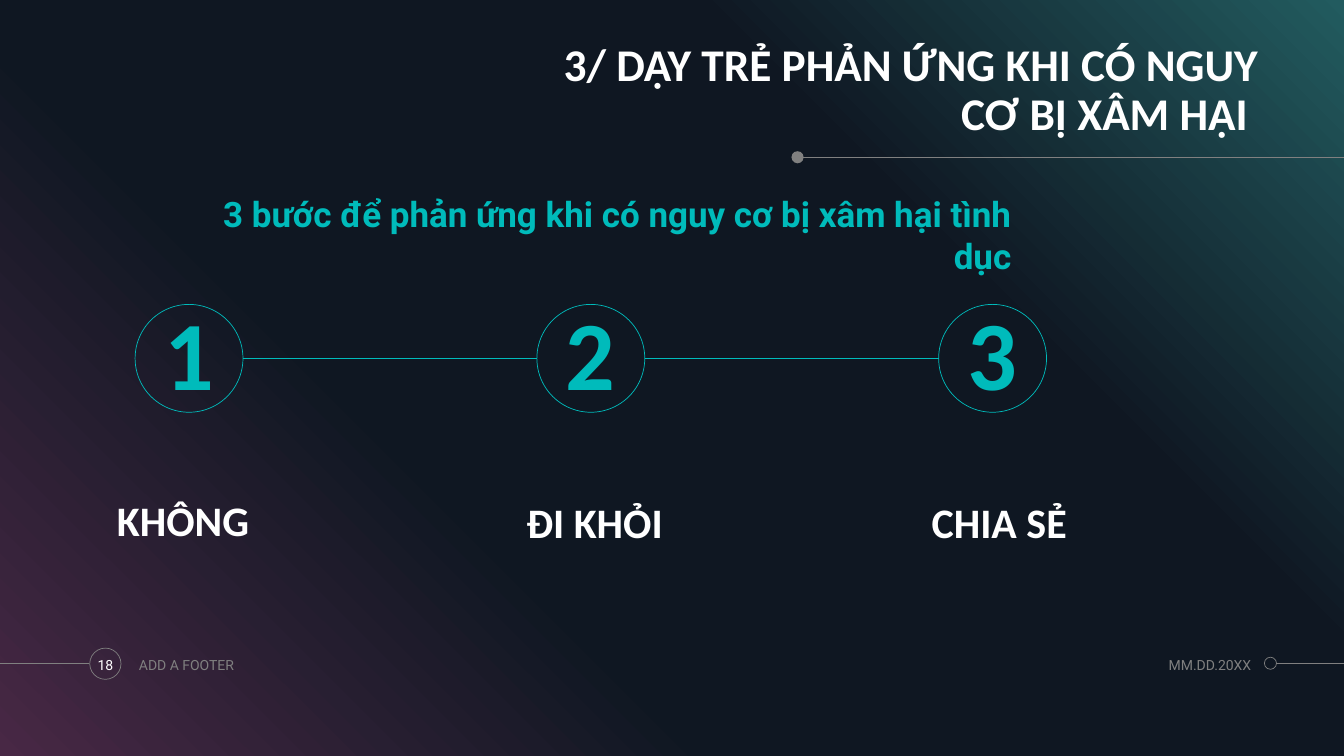
from dataclasses import dataclass

from lxml import etree
from pptx import Presentation
from pptx.dml.color import RGBColor
from pptx.enum.shapes import MSO_CONNECTOR, MSO_SHAPE
from pptx.enum.text import MSO_ANCHOR, MSO_AUTO_SIZE, PP_ALIGN
from pptx.oxml.ns import qn
from pptx.shapes.autoshape import Shape
from pptx.slide import Slide
from pptx.util import Inches, Pt

LEFT, CENTER, RIGHT = PP_ALIGN.LEFT, PP_ALIGN.CENTER, PP_ALIGN.RIGHT
TOP, MIDDLE, BOTTOM = MSO_ANCHOR.TOP, MSO_ANCHOR.MIDDLE, MSO_ANCHOR.BOTTOM
NO_AUTOFIT = MSO_AUTO_SIZE.NONE
OVAL = MSO_SHAPE.OVAL
STRAIGHT = MSO_CONNECTOR.STRAIGHT

WHITE = RGBColor(0xFF, 0xFF, 0xFF)
GRAY = RGBColor(0x80, 0x80, 0x80)
TEAL = RGBColor(0x00, 0xBB, 0xBB)
PURPLE = RGBColor(0x48, 0x28, 0x45)
NAVY = RGBColor(0x0F, 0x17, 0x22)
DARK_TEAL = RGBColor(0x22, 0x5B, 0x5F)
BACKGROUND_STOPS = ((0, PURPLE), (34, NAVY), (69, NAVY), (100, DARK_TEAL))

SLIDE_WIDTH = 13.33
CIRCLE_SIZE = 1.07
CIRCLE_TOP = 3.02
FIRST_CIRCLE_LEFT = 1.34
STEP_PITCH = 3.985
FOOTER_TOP = 6.43
FOOTER_HEIGHT = 0.33


@dataclass(frozen=True)
class Step:
    label: str
    label_left: float
    label_top: float


@dataclass(frozen=True)
class Rule:
    start: tuple[float, float]
    end: tuple[float, float]
    color: RGBColor = GRAY


STEPS = (
    Step("KHÔNG", 1.16, 5.05),
    Step("ĐI KHỎI", 5.22, 5.07),
    Step("CHIA SẺ", 9.24, 5.07),
)
RULES = (
    Rule((SLIDE_WIDTH, 1.56), (7.94, 1.56)),
    Rule((12.66, 6.58), (SLIDE_WIDTH, 6.58)),
    Rule((0, 6.58), (0.88, 6.58)),
)


def write_text(shape: Shape, text: str, *, size: float, color: RGBColor,
               font: str = "Calibri", bold: bool = True,
               align: PP_ALIGN = LEFT, anchor: MSO_ANCHOR = BOTTOM,
               spacing: float = 0.9, side_inset: float = 0) -> None:
    frame = shape.text_frame
    frame.word_wrap = True
    frame.auto_size = NO_AUTOFIT
    frame.vertical_anchor = anchor
    frame.margin_left = frame.margin_right = Inches(side_inset)
    frame.margin_top = frame.margin_bottom = 0
    paragraph = frame.paragraphs[0]
    paragraph.alignment = align
    paragraph.line_spacing = spacing
    run = paragraph.add_run()
    run.text = text
    run.font.name = font
    run.font.size = Pt(size)
    run.font.bold = bold
    run.font.color.rgb = color


def add_text_box(slide: Slide, left: float, top: float, width: float, height: float) -> Shape:
    return slide.shapes.add_textbox(Inches(left), Inches(top), Inches(width), Inches(height))


def add_circle(slide: Slide, left: float, top: float, size: float,
               color: RGBColor = GRAY, filled: bool = False) -> Shape:
    circle = slide.shapes.add_shape(OVAL, Inches(left), Inches(top), Inches(size), Inches(size))
    circle.shadow.inherit = False
    if filled:
        circle.fill.solid()
        circle.fill.fore_color.rgb = color
        circle.line.fill.background()
    else:
        circle.fill.background()
        circle.line.color.rgb = color
        circle.line.width = Pt(0.5)
    return circle


def add_rule(slide: Slide, rule: Rule) -> None:
    connector = slide.shapes.add_connector(
        STRAIGHT, *(Inches(value) for value in rule.start + rule.end))
    connector.line.color.rgb = rule.color
    connector.line.width = Pt(0.5)
    etree.SubElement(connector.element.spPr, qn("a:effectLst"))


def paint_background(slide: Slide) -> None:
    fill = slide.background.fill
    fill.gradient()
    fill.gradient_angle = 45
    stop_list = slide.element.find(".//" + qn("a:gsLst"))
    for stop in list(stop_list):
        stop_list.remove(stop)
    for percent, color in BACKGROUND_STOPS:
        stop = etree.SubElement(stop_list, qn("a:gs"), pos=str(percent * 1000))
        etree.SubElement(stop, qn("a:srgbClr"), val=str(color))


def add_title(slide: Slide) -> None:
    title = slide.shapes.title
    title.left, title.top = Inches(5.58), Inches(0.77)
    title.width, title.height = Inches(6.9), Inches(0.62)
    write_text(title, "3/ DẠY TRẺ PHẢN ỨNG KHI CÓ NGUY CƠ BỊ XÂM HẠI ",
               size=32.4, color=WHITE, align=RIGHT)


def add_steps(slide: Slide) -> None:
    middle = CIRCLE_TOP + CIRCLE_SIZE / 2
    for index, step in enumerate(STEPS):
        left = FIRST_CIRCLE_LEFT + index * STEP_PITCH
        if index:
            previous_right = left - STEP_PITCH + CIRCLE_SIZE
            add_rule(slide, Rule((previous_right, middle), (left, middle), TEAL))
        circle = add_circle(slide, left, CIRCLE_TOP, CIRCLE_SIZE, TEAL)
        write_text(circle, str(index + 1), size=70, color=TEAL, align=CENTER, anchor=MIDDLE)
        label = add_text_box(slide, step.label_left, step.label_top, 3.22, 0.36)
        write_text(label, step.label, size=30, color=WHITE)


def add_footer(slide: Slide) -> None:
    add_circle(slide, 12.54, 6.52, 0.12)
    add_circle(slide, 0.89, FOOTER_TOP, 0.31)
    for text, left, width, color, align, inset in (
        ("18", 0.85, 0.39, WHITE, CENTER, 0),
        ("ADD A FOOTER", 1.28, 3.19, GRAY, LEFT, 0.1),
        ("MM.DD.20XX", 10.95, 1.46, GRAY, RIGHT, 0),
    ):
        box = add_text_box(slide, left, FOOTER_TOP, width, FOOTER_HEIGHT)
        write_text(box, text, size=10, color=color, font="Roboto", bold=False,
                   align=align, anchor=MIDDLE, spacing=1.0, side_inset=inset)


def main() -> None:
    presentation = Presentation()
    presentation.slide_width = Inches(SLIDE_WIDTH)
    presentation.slide_height = Inches(7.5)
    slide = presentation.slides.add_slide(presentation.slide_layouts.get_by_name("Title Only"))
    paint_background(slide)
    add_title(slide)
    for rule in RULES:
        add_rule(slide, rule)
    add_circle(slide, 7.85, 1.5, 0.12, filled=True)
    subtitle = add_text_box(slide, 1.69, 1.91, 8.34, 0.62)
    write_text(subtitle, "3 bước để phản ứng khi có nguy cơ bị xâm hại tình dục",
               size=25, color=TEAL, font="Roboto", align=RIGHT, anchor=TOP, spacing=1.0)
    add_steps(slide)
    add_footer(slide)
    presentation.save("out.pptx")


if __name__ == "__main__":
    main()
